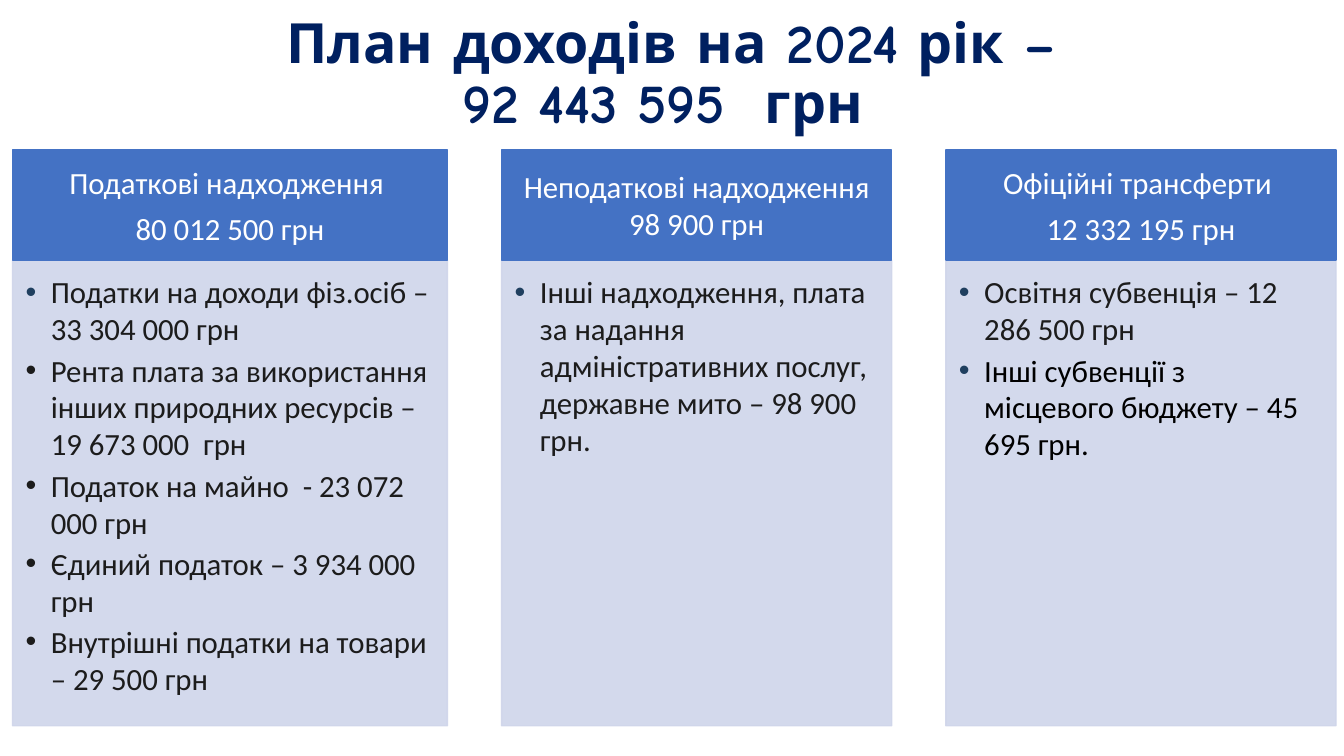
import pptx
import pptx.util
import pptx.dml.color
import pptx.enum.shapes
import pptx.enum.text
import pptx.oxml
import pptx.oxml.ns
import lxml.etree

RGBColor = pptx.dml.color.RGBColor
Inches = pptx.util.Inches
Pt = pptx.util.Pt
Align = pptx.enum.text.PP_ALIGN
Anchor = pptx.enum.text.MSO_ANCHOR
qn = pptx.oxml.ns.qn

NAVY = RGBColor(0x00, 0x20, 0x60)
BLUE = RGBColor(0x44, 0x72, 0xC4)
PALE = RGBColor(0xCF, 0xD5, 0xEA)
STEEL = RGBColor(0x1F, 0x3F, 0x5F)
DARK = RGBColor(0x1C, 0x1C, 0x1C)
BLACK = RGBColor(0, 0, 0)
WHITE = RGBColor(255, 255, 255)

LEFT, GAP = 0.93, 4.03
HEAD_TOP, HEAD_ROWS = 19.87, 14.53
LIST_TOP, LIST_ROWS = 34.4, 61.6

PLAN = [
    (32.36, ["Податкові надходження ", "80 012 500 грн"], [
        ("Податки на доходи фіз.осіб – 33 304 000 грн", DARK, STEEL),
        ("Рента плата за використання інших природних ресурсів – 19 673 000  грн", DARK, DARK),
        ("Податок на майно  - 23 072 000 грн", DARK, DARK),
        ("Єдиний податок – 3 934 000 грн", DARK, DARK),
        ("Внутрішні податки на товари – 29 500 грн", DARK, DARK),
    ]),
    (29.03, ["Неподаткові надходження 98 900 грн"], [
        ("Інші надходження, плата за надання адміністративних послуг, "
         "державне мито – 98 900 грн.", DARK, STEEL),
    ]),
    (29.03, ["Офіційні трансферти ", "12 332 195 грн"], [
        ("Освітня субвенція – 12 286 500 грн", DARK, STEEL),
        ("Інші субвенції з місцевого бюджету – 45 695 грн.", BLACK, STEEL),
    ]),
]


class Deck:
    font, size = "Calibri", 22

    def __init__(self):
        self.prs = pptx.Presentation()
        self.prs.slide_width = Inches(13.33)
        self.prs.slide_height = Inches(7.5)
        self.slide = self.prs.slides.add_slide(self.prs.slide_layouts[4])

    def area(self, x, y, w, h):
        col = self.prs.slide_width / 100
        row = self.prs.slide_height / 100
        return [int(x * col), int(y * row), int(w * col), int(h * row)]

    def place(self, shape, *box):
        shape.left, shape.top, shape.width, shape.height = self.area(*box)

    def frame(self, shape, anchor, pads):
        text = shape.text_frame
        text.word_wrap = True
        text.auto_size = pptx.enum.text.MSO_AUTO_SIZE.NONE
        text.vertical_anchor = anchor
        text.margin_left, text.margin_top, text.margin_right, text.margin_bottom = map(Inches, pads)
        return text

    def paint(self, shape, color, alpha=None):
        shape.fill.solid()
        shape.fill.fore_color.rgb = color
        shape.line.color.rgb = color
        shape.line.width = Pt(1)
        if alpha:
            for tone in shape.element.spPr.iter(qn("a:srgbClr")):
                lxml.etree.SubElement(tone, qn("a:alpha"), val=str(alpha * 1000))

    def add_text(self, para, text, color, font=None, size=None, bold=False):
        run = para.add_run()
        run.text = text
        run.font.name = font or self.font
        run.font.size = Pt(size or self.size)
        run.font.bold = bold
        run.font.color.rgb = color

    def paras(self, text, count, align, after):
        for i in range(count):
            para = text.paragraphs[0] if i == 0 else text.add_paragraph()
            para.alignment = align
            para.space_before = Pt(0)
            para.space_after = Pt(after)
            yield para

    def title(self, lines, *box):
        shape = self.slide.shapes.title
        self.place(shape, *box)
        text = self.frame(shape, Anchor.MIDDLE, (0.1, 0.05, 0.1, 0.05))
        para = text.paragraphs[0]
        para.alignment = Align.CENTER
        para.line_spacing = 0.9
        for i, line in enumerate(lines):
            if i:
                para.add_line_break()
            self.add_text(para, line, NAVY, "Comic Neue", 39.6, True)

    def head(self, lines, *box):
        kind = pptx.enum.shapes.MSO_SHAPE.RECTANGLE
        shape = self.slide.shapes.add_shape(kind, *self.area(*box))
        shape.shadow.inherit = False
        self.paint(shape, BLUE)
        text = self.frame(shape, Anchor.MIDDLE, (0.17, 0.1, 0.17, 0.1))
        for para, line in zip(self.paras(text, len(lines), Align.CENTER, 7), lines):
            self.add_text(para, line, WHITE)

    def bullet(self, para, color):
        props = para._p.get_or_add_pPr()
        props.set("marL", str(Inches(0.25)))
        props.set("indent", str(-Inches(0.25)))
        tint = lxml.etree.SubElement(props, qn("a:buClr"))
        lxml.etree.SubElement(tint, qn("a:srgbClr"), val=str(color))
        lxml.etree.SubElement(props, qn("a:buFont"), typeface="Arial")
        lxml.etree.SubElement(props, qn("a:buChar"), char="•")

    def points(self, slot, items, *box):
        shape = self.slide.placeholders[slot]
        self.place(shape, *box)
        self.paint(shape, PALE, 90)
        text = self.frame(shape, Anchor.TOP, (0.13, 0.13, 0.17, 0.19))
        for para, (line, color, dot) in zip(self.paras(text, len(items), Align.LEFT, 3), items):
            self.bullet(para, dot)
            self.add_text(para, line, color)

    def prune(self):
        for shape in list(self.slide.placeholders):
            if not shape.text_frame.text:
                shape.element.getparent().remove(shape.element)


def main():
    deck = Deck()
    deck.title(["План доходів на 2024 рік –", "92 443 595  грн "], 6.9, 2.67, 86.27, 14.53)
    x = LEFT
    for slot, (width, lines, items) in enumerate(PLAN, 1):
        deck.head(lines, x, HEAD_TOP, width, HEAD_ROWS)
        deck.points(slot, items, x, LIST_TOP, width, LIST_ROWS)
        x += width + GAP
    deck.prune()
    deck.prs.save("out.pptx")


if __name__ == "__main__":
    main()
